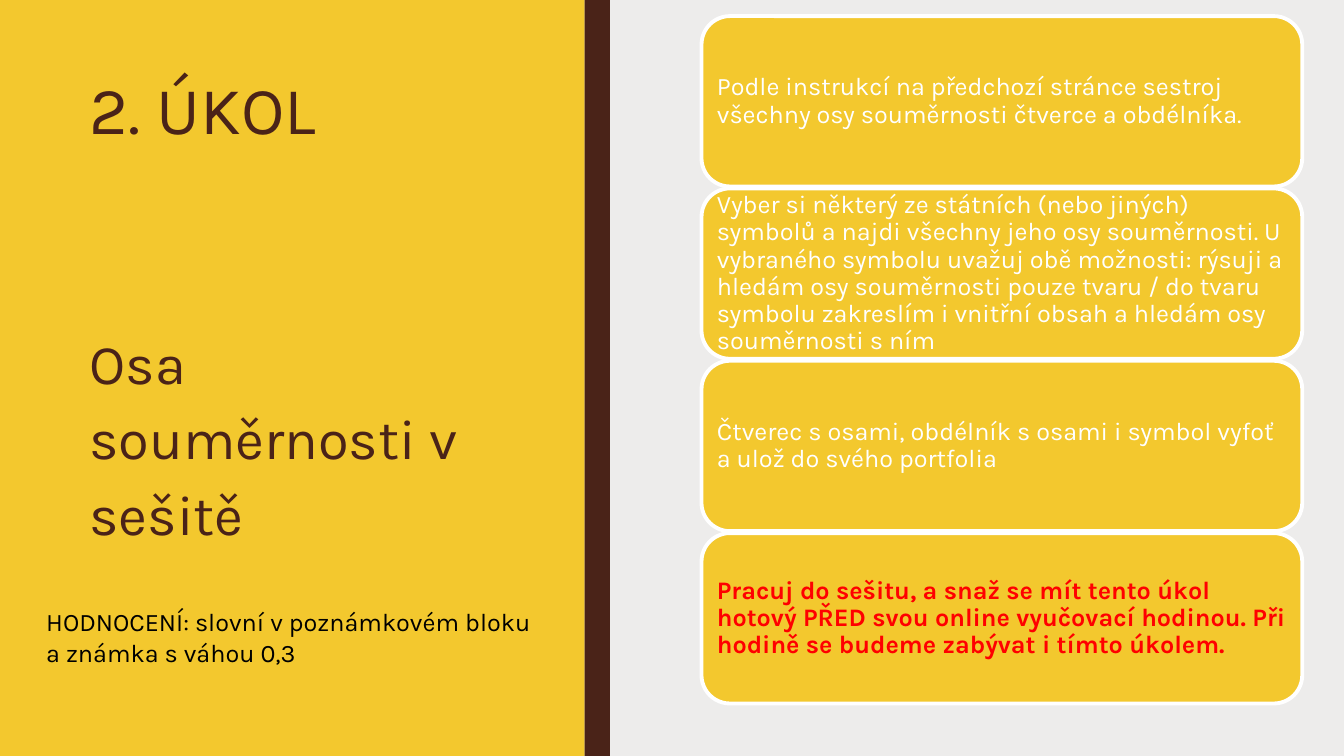
from pptx import Presentation
from pptx.dml.color import RGBColor
from pptx.enum.shapes import MSO_SHAPE
from pptx.enum.text import MSO_ANCHOR, PP_ALIGN
from pptx.util import Pt

RECTANGLE = MSO_SHAPE.RECTANGLE
ROUNDED = MSO_SHAPE.ROUNDED_RECTANGLE
MIDDLE = MSO_ANCHOR.MIDDLE
LEFT = PP_ALIGN.LEFT

FONT = "Karla"
COLORS = {
    "background": "EDECEB",
    "yellow": "F3C82E",
    "brown": "4A2318",
    "white": "FFFFFF",
    "black": "000000",
    "red": "FF0000",
}

SLIDE_W, SLIDE_H = 960, 540
PANELS = [(0, 417.6, "yellow"), (417.6, 18, "brown")]
HEADINGS = [
    ("2. ÚKOL", (56.9, 54, 303.8, 169.9), 48, "brown", 0.84, 0),
    ("Osa souměrnosti v sešitě", (56.9, 224.6, 303.8, 125.3), 40, "brown", 1.13, 15),
    ("HODNOCENÍ: slovní v poznámkovém bloku a známka s váhou 0,3",
     (25.9, 429.8, 370.8, 72.7), 18, "black", 1.0, 0),
]
TASKS = [
    ("Podle instrukcí na předchozí stránce sestroj všechny osy souměrnosti "
     "čtverce a obdélníka.", "white", False),
    ("Vyber si některý ze státních (nebo jiných) symbolů a najdi všechny jeho osy "
     "souměrnosti. U vybraného symbolu uvažuj obě možnosti: rýsuji a hledám osy "
     "souměrnosti pouze tvaru / do tvaru symbolu zakreslím i vnitřní obsah a hledám "
     "osy souměrnosti s ním", "white", False),
    ("Čtverec s osami, obdélník s osami i symbol vyfoť a ulož do svého portfolia",
     "white", False),
    ("Pracuj do sešitu, a snaž se mít tento úkol hotový PŘED svou online vyučovací "
     "hodinou. Při hodině se budeme zabývat i tímto úkolem.", "red", True),
]
CARD_X, CARD_Y, CARD_W, CARD_H = 501.1, 11.5, 429.1, 121.7
CARD_STEP = 123.1
CARD_INSET = 5.04


def color(name):
    return RGBColor.from_string(COLORS[name])


def add_block(slide, preset, box, fill):
    block = slide.shapes.add_shape(preset, *map(Pt, box))
    block.shadow.inherit = False
    block.fill.solid()
    block.fill.fore_color.rgb = color(fill)
    block.line.fill.background()
    return block


def write(frame, text, size, ink, spacing, after=0, bold=False):
    frame.word_wrap = True
    paragraph = frame.paragraphs[0]
    paragraph.alignment = LEFT
    paragraph.line_spacing = spacing
    paragraph.space_after = Pt(after)
    run = paragraph.add_run()
    run.text = text
    run.font.name = FONT
    run.font.size = Pt(size)
    run.font.bold = bold
    run.font.color.rgb = color(ink)


def main():
    deck = Presentation()
    deck.slide_width, deck.slide_height = Pt(SLIDE_W), Pt(SLIDE_H)
    slide = deck.slides.add_slide(deck.slide_layouts[6])
    slide.background.fill.solid()
    slide.background.fill.fore_color.rgb = color("background")

    for left, width, fill in PANELS:
        add_block(slide, RECTANGLE, (left, 0, width, SLIDE_H), fill)

    for text, box, size, ink, spacing, after in HEADINGS:
        heading = slide.shapes.add_textbox(*map(Pt, box))
        write(heading.text_frame, text, size, ink, spacing, after)

    for index, (text, ink, bold) in enumerate(TASKS):
        top = CARD_Y + index * CARD_STEP
        card = add_block(slide, ROUNDED, (CARD_X, top, CARD_W, CARD_H), "yellow")
        card.line.color.rgb = color("white")
        card.line.width = Pt(2.75)
        frame = card.text_frame
        frame.vertical_anchor = MIDDLE
        frame.margin_left = frame.margin_right = Pt(CARD_INSET)
        frame.margin_top = frame.margin_bottom = Pt(CARD_INSET)
        write(frame, text, 18, ink, 0.9, bold=bold)

    deck.save("out.pptx")


if __name__ == "__main__":
    main()
